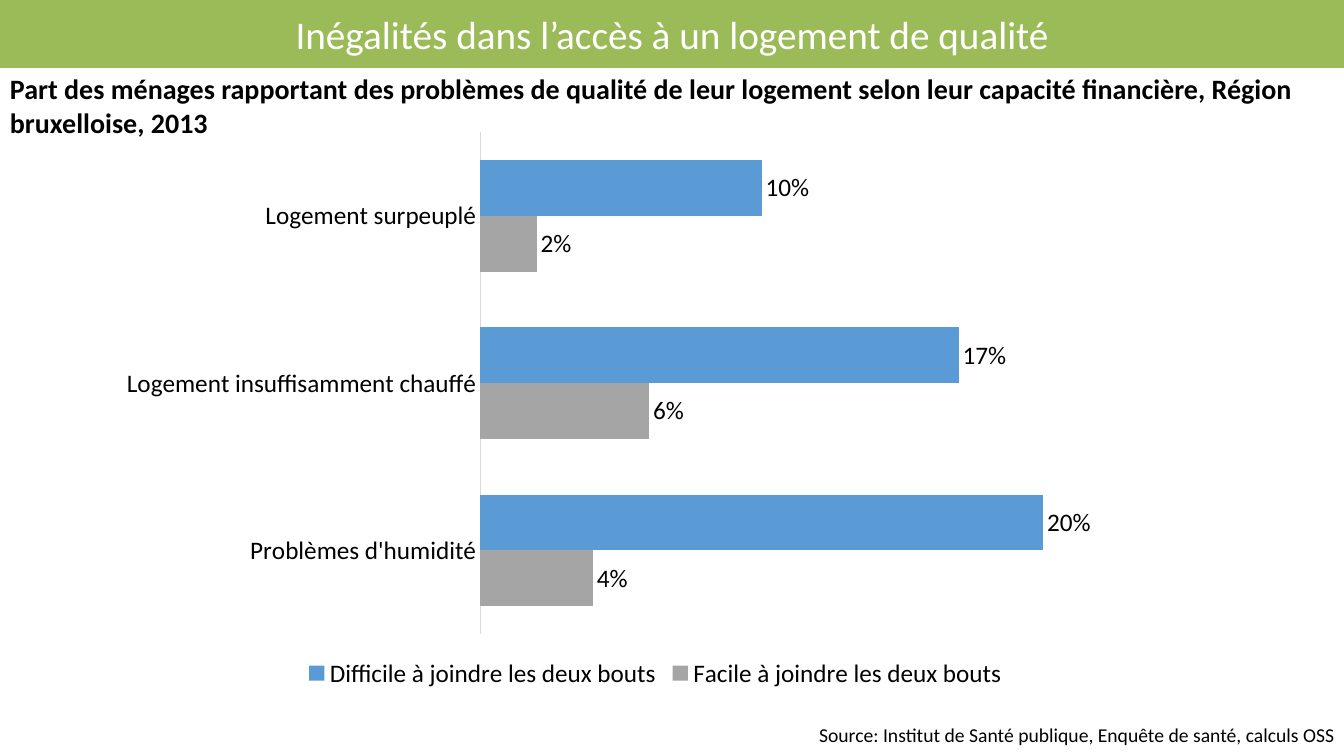
from pptx import Presentation
from pptx.chart.data import CategoryChartData
from pptx.dml.color import RGBColor
from pptx.enum.chart import (XL_CHART_TYPE as ChartType, XL_LABEL_POSITION as LabelPos,
                             XL_LEGEND_POSITION as LegendPos, XL_TICK_MARK as Tick)
from pptx.enum.text import MSO_ANCHOR as Anchor, MSO_AUTO_SIZE as AutoSize, PP_ALIGN as Align
from pptx.util import Inches, Pt

TITLE = "Inégalités dans l’accès à un logement de qualité"
SUBTITLE = ("Part des ménages rapportant des problèmes de qualité de leur logement "
            "selon leur capacité financière, Région bruxelloise, 2013")
SOURCE = "Source: Institut de Santé publique, Enquête de santé, calculs OSS"
PROBLEMS = ["Problèmes d'humidité", "Logement insuffisamment chauffé", "Logement surpeuplé"]
HOUSEHOLDS = [
    ("Facile à joindre les deux bouts", (0.04, 0.06, 0.02), "grey"),
    ("Difficile à joindre les deux bouts", (0.20, 0.17, 0.10), "blue"),
]
COLORS = {"green": "9BBB59", "white": "FFFFFF", "black": "000000",
          "grey": "A5A5A5", "blue": "5B9BD5", "axis": "D9D9D9"}
FONT = "Calibri"
BAND_END = 0.09


def rgb(name):
    return RGBColor.from_string(COLORS[name])


def set_font(font, size, color="black", bold=False):
    font.name, font.size, font.bold = FONT, Pt(size), bold
    font.color.rgb = rgb(color)


def set_text(s, box, text, size, color="black", bold=False, align=Align.LEFT, anchor=Anchor.TOP):
    s.left, s.top, s.width, s.height = map(Inches, box)
    tf = s.text_frame
    tf.text = text
    tf.word_wrap = True
    tf.auto_size = AutoSize.NONE
    tf.vertical_anchor = anchor
    p = tf.paragraphs[0]
    p.alignment = align
    set_font(p.font, size, color, bold)


def paint_background(slide):
    """Green title band over white, as a gradient with a hard edge."""
    fill = slide.background.fill
    fill.gradient()
    fill.gradient_angle = 270
    for stop, color in zip(fill.gradient_stops, ("green", "white")):
        stop.position = BAND_END
        stop.color.rgb = rgb(color)


def add_housing_chart(slide):
    data = CategoryChartData(number_format="0%")
    data.categories = PROBLEMS
    for name, values, _ in HOUSEHOLDS:
        data.add_series(name, values)
    box = map(Inches, (1.04, 1.2, 10.92, 5.68))
    chart = slide.shapes.add_chart(ChartType.BAR_CLUSTERED, *box, data).chart
    set_font(chart.font, 14)
    chart.has_title = False

    chart.has_legend = True
    chart.legend.position = LegendPos.BOTTOM
    chart.legend.include_in_layout = False
    set_font(chart.legend.font, 18)

    axis = chart.category_axis
    axis.major_tick_mark = axis.minor_tick_mark = Tick.NONE
    axis.format.line.color.rgb = rgb("axis")
    axis.format.line.width = Pt(0.75)
    set_font(axis.tick_labels.font, 18)
    chart.value_axis.visible = False
    chart.value_axis.has_major_gridlines = False
    chart.value_axis.minimum_scale = 0

    plot = chart.plots[0]
    plot.gap_width, plot.overlap = 100, 0
    plot.vary_by_categories = False
    plot.has_data_labels = True
    labels = plot.data_labels
    labels.show_value = True
    labels.position = LabelPos.OUTSIDE_END
    labels.number_format, labels.number_format_is_linked = "0%", False
    set_font(labels.font, 18)
    for series, (_, _, color) in zip(plot.series, HOUSEHOLDS):
        series.format.fill.solid()
        series.format.fill.fore_color.rgb = rgb(color)


def main():
    prs = Presentation()
    prs.slide_width, prs.slide_height = Inches(13.33), Inches(7.5)
    slide = prs.slides.add_slide(prs.slide_layouts.get_by_name("Title Only"))
    paint_background(slide)
    set_text(slide.shapes.title, (0, 0.05, 13.33, 0.57), TITLE, 28, "white",
             align=Align.CENTER, anchor=Anchor.MIDDLE)
    set_text(slide.shapes.add_textbox(0, 0, 0, 0), (0, 0.66, 13.45, 0.77), SUBTITLE, 20, bold=True)
    set_text(slide.shapes.add_textbox(0, 0, 0, 0), (4.57, 7.12, 8.77, 0.34), SOURCE, 14,
             align=Align.RIGHT, anchor=Anchor.MIDDLE)
    add_housing_chart(slide)
    prs.save("out.pptx")


if __name__ == "__main__":
    main()
